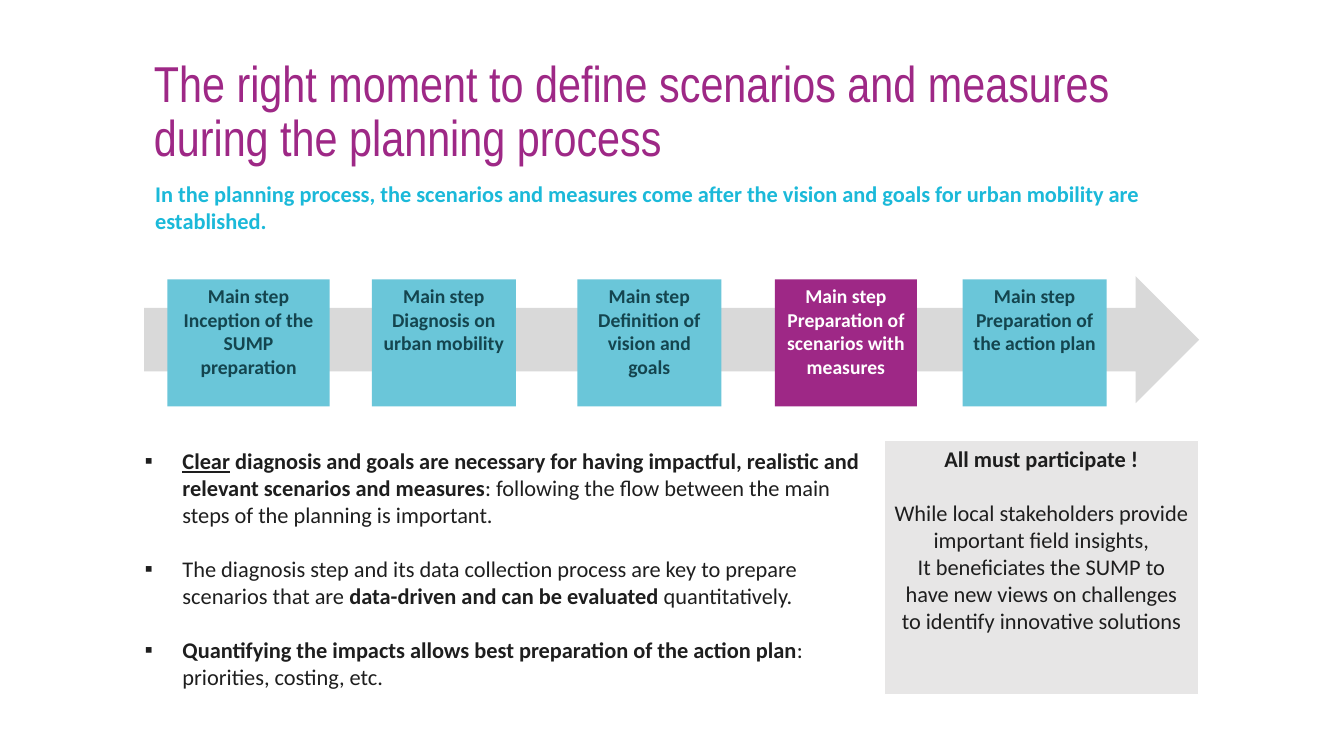
from pptx import Presentation
from pptx.dml.color import RGBColor
from pptx.enum.shapes import MSO_SHAPE
from pptx.enum.text import MSO_ANCHOR, PP_ALIGN
from pptx.oxml.ns import qn
from pptx.util import Cm, Pt
from lxml import etree

RECT, ARROW = MSO_SHAPE.RECTANGLE, MSO_SHAPE.RIGHT_ARROW
TOP, MIDDLE = MSO_ANCHOR.TOP, MSO_ANCHOR.MIDDLE
LEFT, CENTER = PP_ALIGN.LEFT, PP_ALIGN.CENTER
COLORS = {
    "plum": "9E2886", "sky": "6AC6D9", "cyan": "1BB9D9", "teal": "14454F",
    "ink": "1E1E1E", "band": "D9D9D9", "panel": "E7E6E6", "white": "FFFFFF",
}
GAP = Pt(19.5)

STEPS = [
    (0.59, 4.09, "Inception of the SUMP preparation"),
    (5.74, 3.63, "Diagnosis on urban mobility"),
    (10.92, 3.63, "Definition of vision and goals"),
    (15.9, 3.58, "Preparation of scenarios with measures"),
    (20.63, 3.63, "Preparation of the action plan"),
]
FOCUS = 3
POINTS = [
    [("Clear", "bu"),
     (" diagnosis and goals are necessary for having impactful, realistic and "
      "relevant scenarios and measures", "b"),
     (": following the flow between the main steps of the planning is important.", "")],
    [("The diagnosis step and its data collection process are key to prepare "
      "scenarios that are ", ""),
     ("data-driven and can be evaluated ", "b"),
     ("quantitatively.", "")],
    [("Quantifying the impacts allows best preparation of the action plan", "b"),
     (": priorities, costing, etc.", "")],
]


def color(name):
    return RGBColor.from_string(COLORS[name])


def add_runs(para, runs, size, tint, face="Calibri"):
    for text, style in runs:
        run = para.add_run()
        run.text = text
        font = run.font
        font.name, font.size = face, Pt(size)
        font.bold, font.underline = "b" in style, "u" in style
        font.color.rgb = color(tint)


def next_para(frame, index, align=LEFT):
    para = frame.add_paragraph() if index else frame.paragraphs[0]
    para.alignment = align
    return para


def set_frame(shape, anchor=TOP):
    frame = shape.text_frame
    frame.word_wrap = True
    frame.vertical_anchor = anchor
    return frame


def add_box(slide, box, anchor=TOP):
    return set_frame(slide.shapes.add_textbox(*map(Cm, box)), anchor)


def add_block(slide, kind, box, fill, line=None):
    shape = slide.shapes.add_shape(kind, *map(Cm, box))
    shape.shadow.inherit = False
    shape.fill.solid()
    shape.fill.fore_color.rgb = color(fill)
    if line:
        shape.line.color.rgb = color(line)
        shape.line.width = Pt(0.75)
    else:
        shape.line.fill.background()
    return set_frame(shape)


def add_title(slide, box):
    para = next_para(add_box(slide, box, MIDDLE), 0)
    para.line_spacing = 0.9
    text = "The right moment to define scenarios and measures during the planning process"
    add_runs(para, [(text, "")], 36, "plum", "Arial Narrow")


def add_lead(slide, box):
    para = next_para(add_box(slide, box), 0)
    text = ("In the planning process, the scenarios and measures come after "
            "the vision and goals for urban mobility are established.")
    add_runs(para, [(text, "b")], 16, "cyan")


def add_steps(slide, box):
    left, top, _, height = box
    add_block(slide, ARROW, box, "band")
    for index, (shift, width, label) in enumerate(STEPS):
        fill, tint = ("plum", "white") if index == FOCUS else ("sky", "teal")
        frame = add_block(slide, RECT, (left + shift, top + 0.08, width, height), fill)
        for row, text in enumerate(("Main step", label)):
            add_runs(next_para(frame, row, CENTER), [(text, "b")], 14, tint)


def add_points(slide, box):
    frame = add_box(slide, box)
    for index, runs in enumerate(POINTS):
        para = next_para(frame, index)
        if index:
            para.space_before = GAP
        props = para._p.get_or_add_pPr()
        props.set("marL", str(Cm(0.95)))
        props.set("indent", str(-Cm(0.95)))
        etree.SubElement(props, qn("a:buFont")).set("typeface", "Calibri")
        etree.SubElement(props, qn("a:buChar")).set("char", "▪")
        add_runs(para, runs, 16, "ink")


def add_panel(slide, box):
    frame = add_block(slide, RECT, box, "panel", "white")
    lines = [
        ("All must participate !", "b"),
        ("While local stakeholders provide important field insights,", ""),
        ("It beneficiates the SUMP to have new views on challenges "
         "to identify innovative solutions", ""),
    ]
    for index, line in enumerate(lines):
        para = next_para(frame, index, CENTER)
        if index == 1:
            para.space_before = GAP
        add_runs(para, [line], 16, "ink")


def main():
    deck = Presentation()
    deck.slide_width, deck.slide_height = Cm(33.87), Cm(19.05)
    slide = deck.slides.add_slide(deck.slide_layouts[6])
    add_title(slide, (3.63, 1.32, 26.59, 3.07))
    add_steps(slide, (3.63, 6.96, 26.59, 3.2))
    add_lead(slide, (3.66, 4.42, 26.82, 1.63))
    add_points(slide, (3.4, 11.15, 18.87, 6.4))
    add_panel(slide, (22.28, 11.1, 7.93, 6.4))
    deck.save("out.pptx")


if __name__ == "__main__":
    main()
